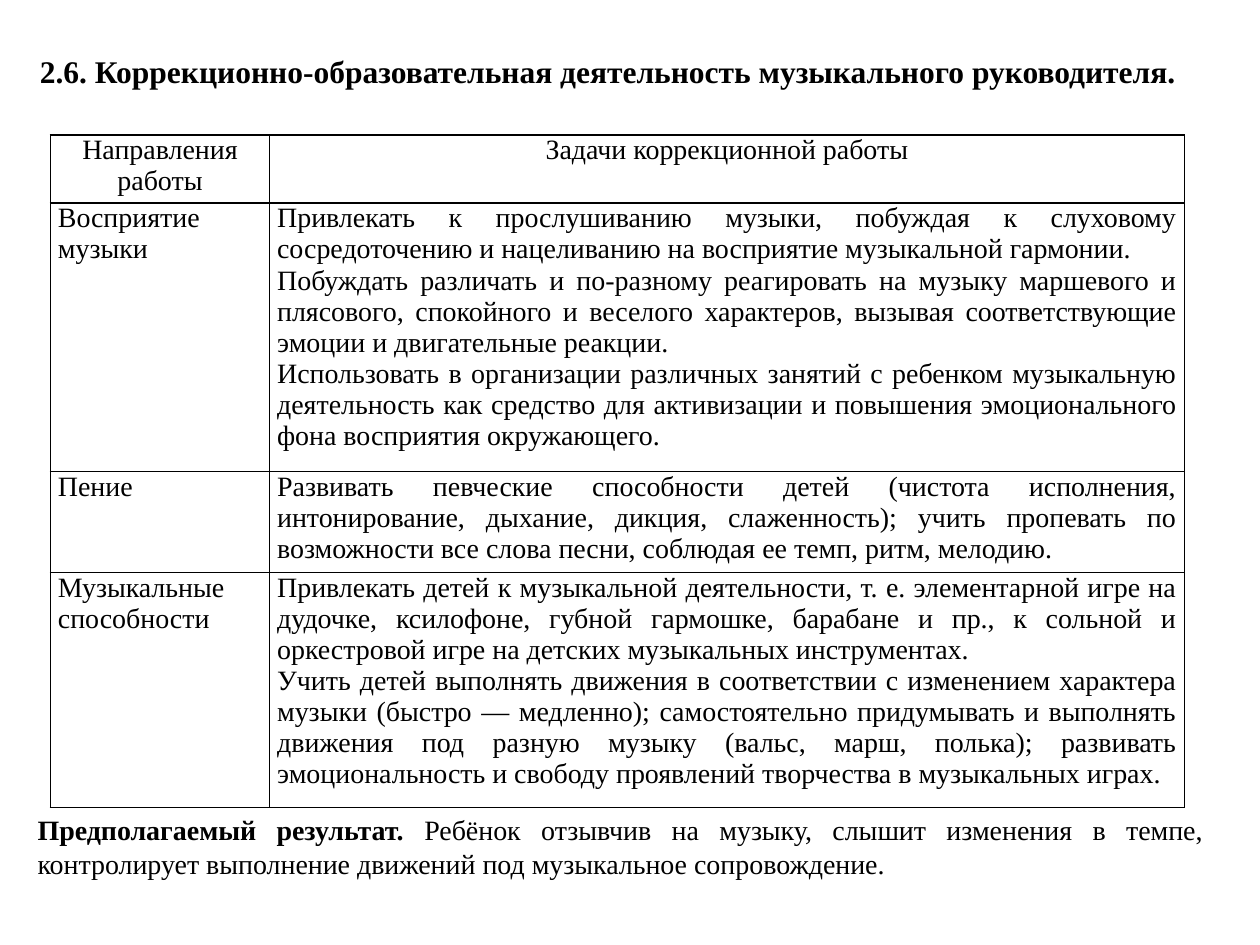
from lxml.etree import SubElement
from pptx import Presentation
from pptx.dml.color import RGBColor
from pptx.enum.text import MSO_ANCHOR, MSO_AUTO_SIZE, PP_ALIGN as Align
from pptx.oxml.ns import qn
from pptx.util import Inches, Pt

FONT = "Times New Roman"
INK = "000000"
HEADERS = ["Направления работы", "Задачи коррекционной работы"]
DIRECTIONS = [
    ("Восприятие музыки", [
        "Привлекать к прослушиванию музыки, побуждая к слуховому сосредоточению и нацеливанию на восприятие музыкальной гармонии.",
        "Побуждать различать и по-разному реагировать на музыку маршевого и плясового, спокойного и веселого характеров, вызывая соответствующие эмоции и двигательные реакции.",
        "Использовать в организации различных занятий с ребенком музыкальную деятельность как средство для активизации и повышения эмоционального фона восприятия окружающего.",
    ]),
    ("Пение", [
        "Развивать певческие способности детей (чистота исполнения, интонирование, дыхание, дикция, слаженность); учить пропевать по возможности все слова песни, соблюдая ее темп, ритм, мелодию.",
    ]),
    ("Музыкальные способности", [
        "Привлекать детей к музыкальной деятельности, т. е. элементарной игре на дудочке, ксилофоне, губной гармошке, барабане и пр., к сольной и оркестровой игре на детских музыкальных инструментах.",
        "Учить детей выполнять движения в соответствии с изменением характера музыки (быстро — медленно); самостоятельно придумывать и выполнять движения под разную музыку (вальс, марш, полька); развивать эмоциональность и свободу проявлений творчества в музыкальных играх.",
    ]),
]
COLUMN_WIDTHS = [1.74, 7.26]
ROW_HEIGHTS = [0.54, 2.13, 0.8, 1.86]


def color(value):
    return RGBColor.from_string(value)


def style_run(run, size, bold=False):
    run.font.name = FONT
    run.font.size = Pt(size)
    run.font.bold = bold
    run.font.color.rgb = color(INK)


def write(frame, paragraphs, align, size, bold=False):
    frame.text = "\n".join(paragraphs)
    frame.word_wrap = True
    for paragraph in frame.paragraphs:
        paragraph.alignment = align
        for run in paragraph.runs:
            style_run(run, size, bold)


def add_borders(cell):
    properties = cell._tc.get_or_add_tcPr()
    for side in ("a:lnL", "a:lnR", "a:lnT", "a:lnB"):
        line = SubElement(properties, qn(side), w=str(Pt(1)))
        fill = SubElement(line, qn("a:solidFill"))
        SubElement(fill, qn("a:srgbClr"), val=INK)


def fill_cell(cell, paragraphs, align):
    write(cell.text_frame, paragraphs, align, 16)
    cell.margin_left = cell.margin_right = Inches(0.06)
    cell.margin_top = cell.margin_bottom = 0
    add_borders(cell)
    cell.fill.background()


def add_title(slide):
    title = slide.shapes.title
    title.left, title.top = Inches(0), Inches(0.36)
    title.width, title.height = Inches(9.65), Inches(0.4)
    frame = title.text_frame
    write(frame, ["2.6. Коррекционно-образовательная деятельность музыкального руководителя."],
          Align.CENTER, 18, bold=True)
    frame.vertical_anchor = MSO_ANCHOR.TOP
    frame.auto_size = MSO_AUTO_SIZE.SHAPE_TO_FIT_TEXT


def add_tasks_table(slide):
    table = slide.shapes.add_table(
        len(ROW_HEIGHTS), len(COLUMN_WIDTHS), Inches(0.4), Inches(1.07),
        Inches(sum(COLUMN_WIDTHS)), Inches(sum(ROW_HEIGHTS))).table
    table.first_row = table.horz_banding = False
    for column, width in zip(table.columns, COLUMN_WIDTHS):
        column.width = Inches(width)
    for row, height in zip(table.rows, ROW_HEIGHTS):
        row.height = Inches(height)
    for index, header in enumerate(HEADERS):
        fill_cell(table.cell(0, index), [header], Align.CENTER)
    for index, (direction, tasks) in enumerate(DIRECTIONS, 1):
        fill_cell(table.cell(index, 0), [direction], Align.LEFT)
        fill_cell(table.cell(index, 1), tasks, Align.JUSTIFY)


def add_result(slide):
    result = slide.shapes.add_textbox(Inches(0.2), Inches(6.4), Inches(9.45), Inches(0.64))
    frame = result.text_frame
    write(frame, ["Предполагаемый результат. "], Align.JUSTIFY, 16, bold=True)
    frame.auto_size = MSO_AUTO_SIZE.SHAPE_TO_FIT_TEXT
    outcome = frame.paragraphs[0].add_run()
    outcome.text = "Ребёнок отзывчив на музыку, слышит изменения в темпе, контролирует выполнение движений под музыкальное сопровождение."
    style_run(outcome, 16)


def main():
    presentation = Presentation()
    presentation.slide_width = Inches(10)
    presentation.slide_height = Inches(7.5)
    slide = presentation.slides.add_slide(presentation.slide_layouts[5])
    add_title(slide)
    add_tasks_table(slide)
    add_result(slide)
    presentation.save("out.pptx")


if __name__ == "__main__":
    main()
